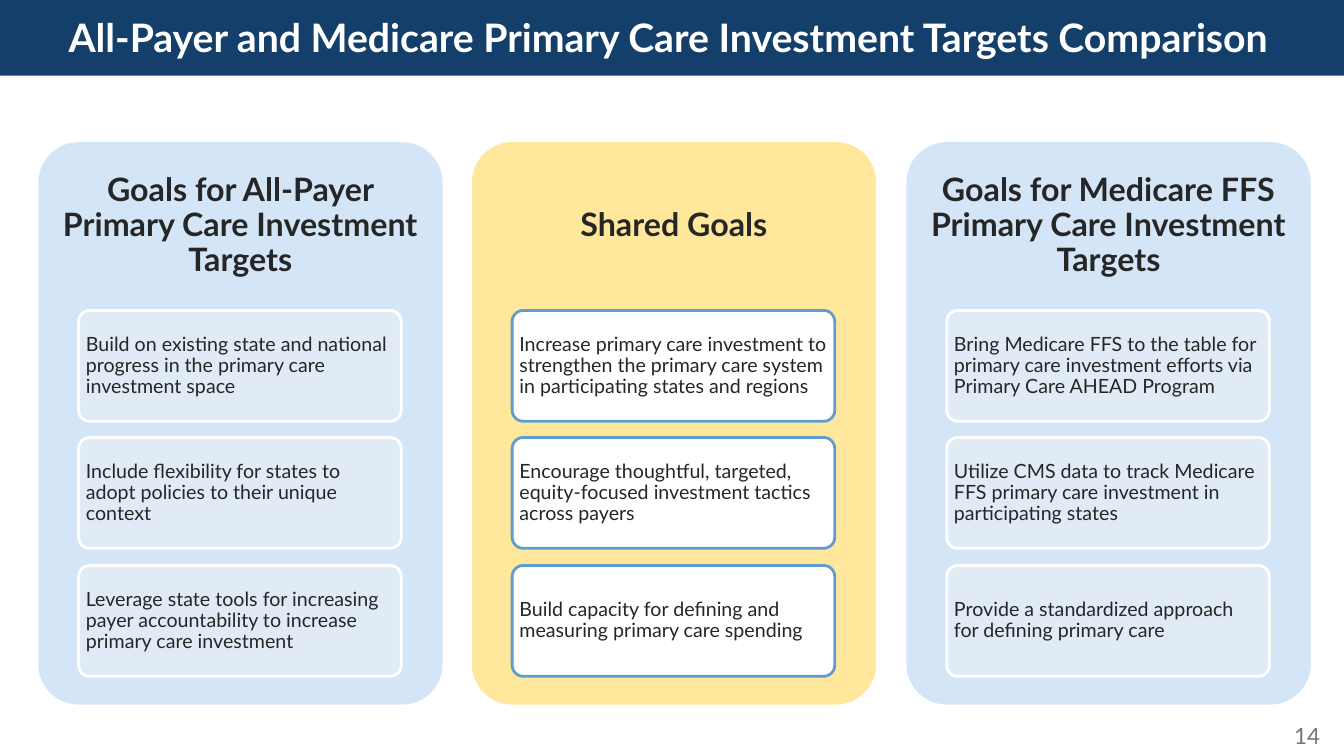
from pptx import Presentation
from pptx.dml.color import RGBColor
from pptx.enum.shapes import MSO_SHAPE
from pptx.enum.text import MSO_ANCHOR, PP_ALIGN
from pptx.util import Pt

PX = 9144  # 100 px to the inch
INK = {
    "navy": "143F6A", "white": "FFFFFF", "grey": "767676", "text": "262626",
    "blue": "D4E5F7", "pale": "E0EBF6", "gold": "FFE79B", "edge": "629DD1",
}
HEAD = {"size": Pt(23), "bold": True}
BODY = {"size": Pt(14), "bold": False}


def draw(kind, left, top, width, height, fill, line=None):
    shape = slide.shapes.add_shape(kind, left * PX, top * PX, width * PX, height * PX)
    shape.shadow.inherit = False
    shape.fill.solid()
    shape.fill.fore_color.rgb = RGBColor.from_string(INK[fill])
    if line:
        shape.line.color.rgb = RGBColor.from_string(INK[line])
        shape.line.width = Pt(2)
    else:
        shape.line.fill.background()
    if kind == MSO_SHAPE.ROUNDED_RECTANGLE:
        shape.adjustments[0] = 0.1
    return shape


def write(shape, text, font, color="text", align=PP_ALIGN.LEFT, inset=(10, 5), space=0.9):
    """Fill a shape with one paragraph; inset is (side, top and bottom) in px."""
    frame = shape.text_frame
    side, edge = inset
    look = {
        "word_wrap": True, "vertical_anchor": MSO_ANCHOR.MIDDLE,
        "margin_left": side * PX, "margin_right": side * PX,
        "margin_top": edge * PX, "margin_bottom": edge * PX,
    }
    for name, value in look.items():
        setattr(frame, name, value)
    para = frame.paragraphs[0]
    para.alignment = align
    para.line_spacing = space
    run = para.add_run()
    run.text = text
    for name, value in {"name": "Lato", **font}.items():
        setattr(run.font, name, value)
    run.font.color.rgb = RGBColor.from_string(INK[color])


deck = Presentation()
deck.slide_width, deck.slide_height = 1333 * PX, 750 * PX
slide = deck.slides.add_slide(deck.slide_layouts[5])

title = slide.shapes.title
place = {"left": 58, "top": 8, "width": 1242, "height": 58}
for name, value in place.items():
    setattr(title, name, value * PX)
write(title, "All-Payer and Medicare Primary Care Investment Targets Comparison",
      {"size": Pt(28), "bold": True}, "white", space=1.0)
band = draw(MSO_SHAPE.RECTANGLE, 0, 0, 1333, 75, "navy")
title.element.addprevious(band.element)

page = slide.shapes.add_textbox(1008 * PX, 717 * PX, 311 * PX, 25 * PX)
write(page, "14", {"size": Pt(16)}, "grey", PP_ALIGN.RIGHT, space=1.0)

panels = [
    ("Goals for All-Payer Primary Care Investment Targets", "blue", "pale", "white", [
        "Build on existing state and national progress in the primary care investment space",
        "Include flexibility for states to adopt policies to their unique context",
        "Leverage state tools for increasing payer accountability to increase "
        "primary care investment",
    ]),
    ("Shared Goals", "gold", "white", "edge", [
        "Increase primary care investment to strengthen the primary care system "
        "in participating states and regions",
        "Encourage thoughtful, targeted, equity-focused investment tactics across payers",
        "Build capacity for defining and measuring primary care spending",
    ]),
    ("Goals for Medicare FFS Primary Care Investment Targets", "blue", "pale", "white", [
        "Bring Medicare FFS to the table for primary care investment efforts "
        "via Primary Care AHEAD Program",
        "Utilize CMS data to track Medicare FFS primary care investment "
        "in participating states",
        "Provide a standardized approach for defining primary care",
    ]),
]
WIDE, STEP = 401, 430.5
CARD, PITCH = 320, 126.5

for col, (name, back, fill, line, goals) in enumerate(panels):
    left = round(38 + col * STEP)
    draw(MSO_SHAPE.ROUNDED_RECTANGLE, left, 141, WIDE, 558, back)
    head = slide.shapes.add_textbox(left * PX, 141 * PX, WIDE * PX, 167 * PX)
    write(head, name, HEAD, align=PP_ALIGN.CENTER, inset=(10, 10))
    for row, goal in enumerate(goals):
        top = round(308 + row * PITCH)
        card = draw(MSO_SHAPE.ROUNDED_RECTANGLE, left + 40, top, CARD, 110, fill, line)
        write(card, goal, BODY, inset=(4, 3))

deck.save("out.pptx")
